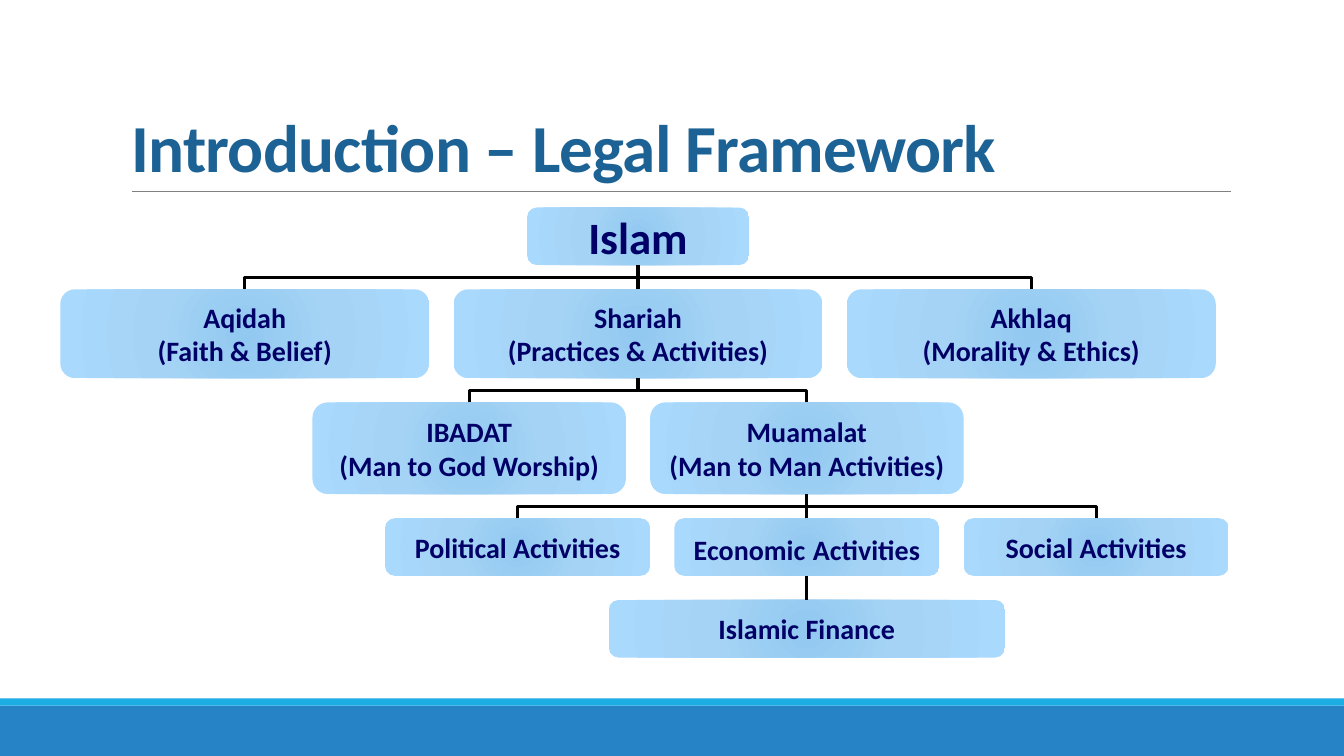
import pptx
import pptx.util
import pptx.dml.color
import pptx.enum.shapes
import pptx.enum.text
import pptx.oxml
import pptx.oxml.ns
from pptx.util import Cm, Pt

# Content: each level names its parent box, its box size in cm and its boxes
TITLE = "Introduction – Legal Framework"
LEVELS = [
    {"parent": None, "width": 5.59, "height": 1.45, "size": "root",
     "boxes": [("Islam",)]},
    {"parent": "Islam", "width": 9.3, "height": 2.24, "size": "box",
     "boxes": [("Aqidah", "(Faith & Belief)"),
               ("Shariah", "(Practices & Activities)"),
               ("Akhlaq", "(Morality & Ethics)")]},
    {"parent": "Shariah", "width": 7.9, "height": 2.31, "size": "box",
     "boxes": [("IBADAT", "(Man to God Worship)"),
               ("Muamalat", "(Man to Man Activities)")]},
    {"parent": "Muamalat", "width": 6.68, "height": 1.45, "size": "box",
     "boxes": [("Political Activities",), ("Economic Activities",),
               ("Social Activities",)]},
    {"parent": "Economic Activities", "width": 9.98, "height": 1.45, "size": "box",
     "boxes": [("Islamic Finance",)]},
]
WIDE_SPACE_LINES = {"Economic Activities"}

# Layout in cm
ROOT_CENTER, CHART_TOP, GAP = 16.08, 5.23, 0.61

THEME = {
    "font": "Calibri",
    "title": "1D6294", "text": "000066", "connector": "000000", "rule": "808080",
    "footer": "2683C6", "stripe": "1CADE4",
    "gradient": [(0, "92C9F0"), (45, "A4D3F5"), (100, "A9D9FD")],
    "sizes": {"title": 48, "root": 32, "box": 20, "wide space": 24},
}
SHAPES = pptx.enum.shapes.MSO_SHAPE
CONNECTORS = pptx.enum.shapes.MSO_CONNECTOR
ANCHORS = pptx.enum.text.MSO_ANCHOR
ALIGNMENTS = pptx.enum.text.PP_ALIGN


def color(name):
    return pptx.dml.color.RGBColor.from_string(THEME[name])


def format_run(run, size, color_name):
    run.font.name = THEME["font"]
    run.font.size = Pt(THEME["sizes"][size])
    run.font.bold = True
    run.font.color.rgb = color(color_name)


def add_band(slide, top, height, color_name):
    band = slide.shapes.add_shape(SHAPES.RECTANGLE, 0, Cm(top), Cm(33.87), Cm(height))
    band.shadow.inherit = False
    band.fill.solid()
    band.fill.fore_color.rgb = color(color_name)
    band.line.fill.background()


def style_connector(connector, color_name, width):
    connector.line.color.rgb = color(color_name)
    connector.line.width = Pt(width)
    properties = connector._element.spPr
    properties.append(pptx.oxml.parse_xml(
        f'<a:effectLst {pptx.oxml.ns.nsdecls("a")}/>'))


def fill_radial(shape):
    stops = "".join(
        f'<a:gs pos="{position * 1000}"><a:srgbClr val="{value}"/></a:gs>'
        for position, value in THEME["gradient"])
    gradient = pptx.oxml.parse_xml(
        f'<a:gradFill {pptx.oxml.ns.nsdecls("a")} rotWithShape="1"><a:gsLst>{stops}</a:gsLst>'
        '<a:path path="circle"><a:fillToRect l="100000" t="100000" r="100000" b="100000"/>'
        '</a:path></a:gradFill>')
    shape._element.spPr.find(pptx.oxml.ns.qn("a:prstGeom")).addnext(gradient)


def add_box(slide, lines, left, top, level):
    box = slide.shapes.add_shape(SHAPES.ROUNDED_RECTANGLE, Cm(left), Cm(top),
                                 Cm(level["width"]), Cm(level["height"]))
    box.shadow.inherit = False
    box.line.fill.background()
    fill_radial(box)
    frame = box.text_frame
    frame.word_wrap = False
    frame.vertical_anchor = ANCHORS.MIDDLE
    frame.margin_left = frame.margin_right = Cm(0.16)
    frame.margin_top = frame.margin_bottom = Cm(0.08)
    frame.text = "\n".join(lines)
    for paragraph, line in zip(frame.paragraphs, lines):
        paragraph.alignment = ALIGNMENTS.CENTER
        if line in WIDE_SPACE_LINES:
            paragraph.clear()
            for part in line.partition(" "):
                paragraph.add_run().text = part
        for run in paragraph.runs:
            format_run(run, "wide space" if run.text == " " else level["size"], "text")
    return box


def join(slide, child, parent):
    child_x, child_y = child.left + child.width // 2, child.top
    parent_x, parent_y = parent.left + parent.width // 2, parent.top + parent.height
    offset = parent_x - child_x
    if abs(offset) < Cm(0.02):
        connector = slide.shapes.add_connector(CONNECTORS.STRAIGHT, child_x, child_y,
                                               parent_x, parent_y)
        connector.begin_connect(child, 0)
        connector.end_connect(parent, 2)
    else:
        # A vertical elbow is a horizontal one turned about its centre
        middle_x, middle_y = (child_x + parent_x) // 2, (child_y + parent_y) // 2
        half_width, half_height = (child_y - parent_y) // 2, abs(offset) // 2
        side = -1 if offset > 0 else 1
        connector = slide.shapes.add_connector(
            CONNECTORS.ELBOW,
            middle_x + side * half_width, middle_y - half_height,
            middle_x - side * half_width, middle_y + half_height)
        turn = 270 if offset > 0 else 90
        transform = connector._element.spPr.find(pptx.oxml.ns.qn("a:xfrm"))
        transform.set("rot", str(turn * 60000))
    style_connector(connector, "connector", 2.25)


def add_title(slide):
    title = slide.shapes.title
    title.left, title.top, title.width, title.height = Cm(3.05), Cm(0.79), Cm(27.94), Cm(4.04)
    title.text_frame.text = TITLE
    title.text_frame.vertical_anchor = ANCHORS.BOTTOM
    paragraph = title.text_frame.paragraphs[0]
    paragraph.alignment = ALIGNMENTS.LEFT
    paragraph.line_spacing = 0.85
    for run in paragraph.runs:
        format_run(run, "title", "title")
        run.font._element.set("spc", "-50")


def add_hierarchy(slide):
    boxes = {}
    top = CHART_TOP
    centers = {None: ROOT_CENTER}
    for level in LEVELS:
        step = level["width"] + GAP
        row_width = len(level["boxes"]) * step - GAP
        row_left = centers[level["parent"]] - row_width / 2
        for index, lines in enumerate(level["boxes"]):
            left = row_left + index * step
            box = add_box(slide, lines, left, top, level)
            boxes[lines[0]] = box
            centers[lines[0]] = left + level["width"] / 2
            if level["parent"]:
                join(slide, box, boxes[level["parent"]])
        top += level["height"] + GAP


def main():
    presentation = pptx.Presentation()
    presentation.slide_width, presentation.slide_height = Cm(33.87), Cm(19.05)
    slide = presentation.slides.add_slide(presentation.slide_layouts[5])

    # Footer bands and title rule
    add_band(slide, 17.78, 1.27, "footer")
    add_band(slide, 17.6, 0.18, "stripe")
    rule = slide.shapes.add_connector(CONNECTORS.STRAIGHT, Cm(3.33), Cm(4.83),
                                      Cm(31.01), Cm(4.83))
    style_connector(rule, "rule", 0.5)

    add_title(slide)
    add_hierarchy(slide)
    presentation.save("out.pptx")


if __name__ == "__main__":
    main()
